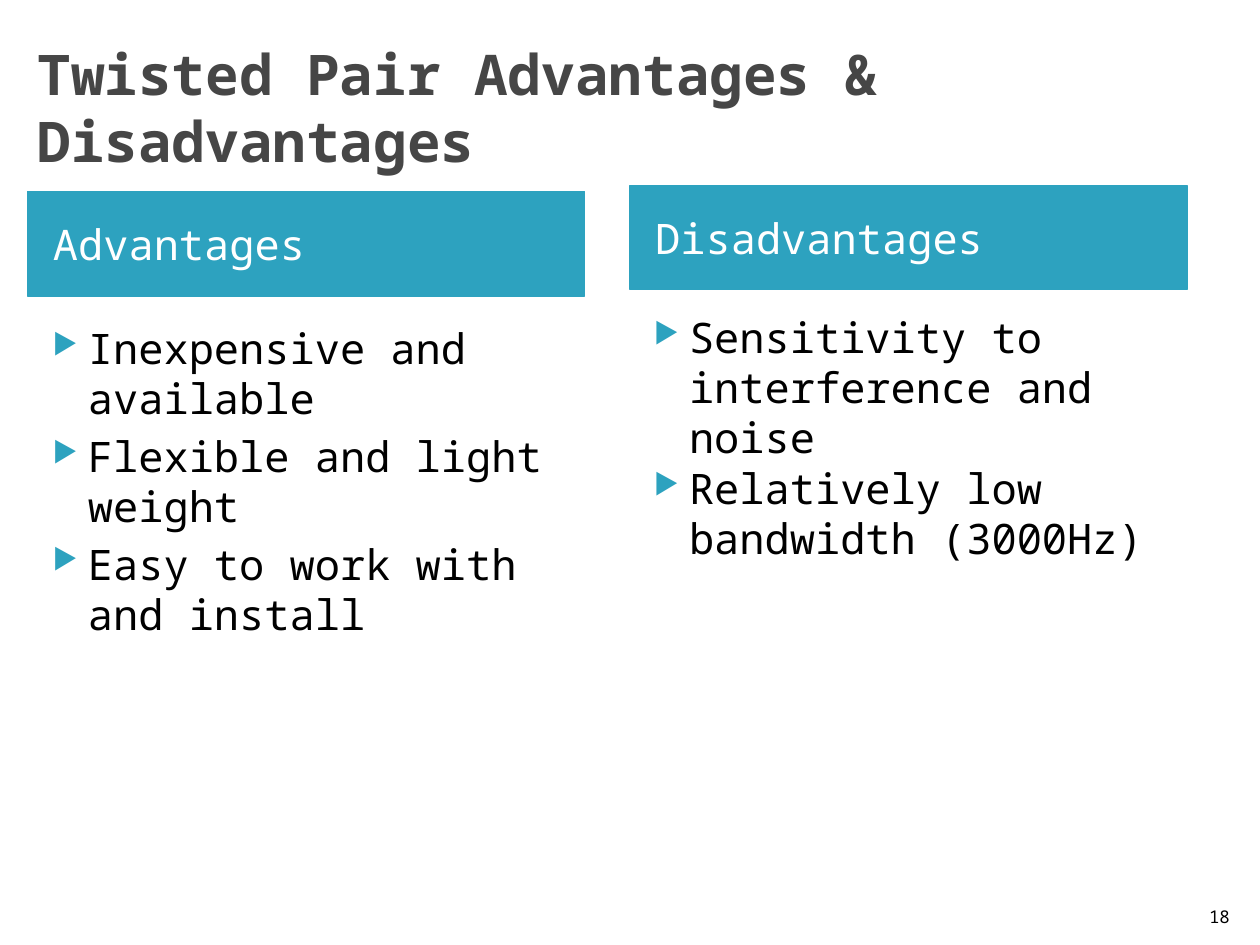
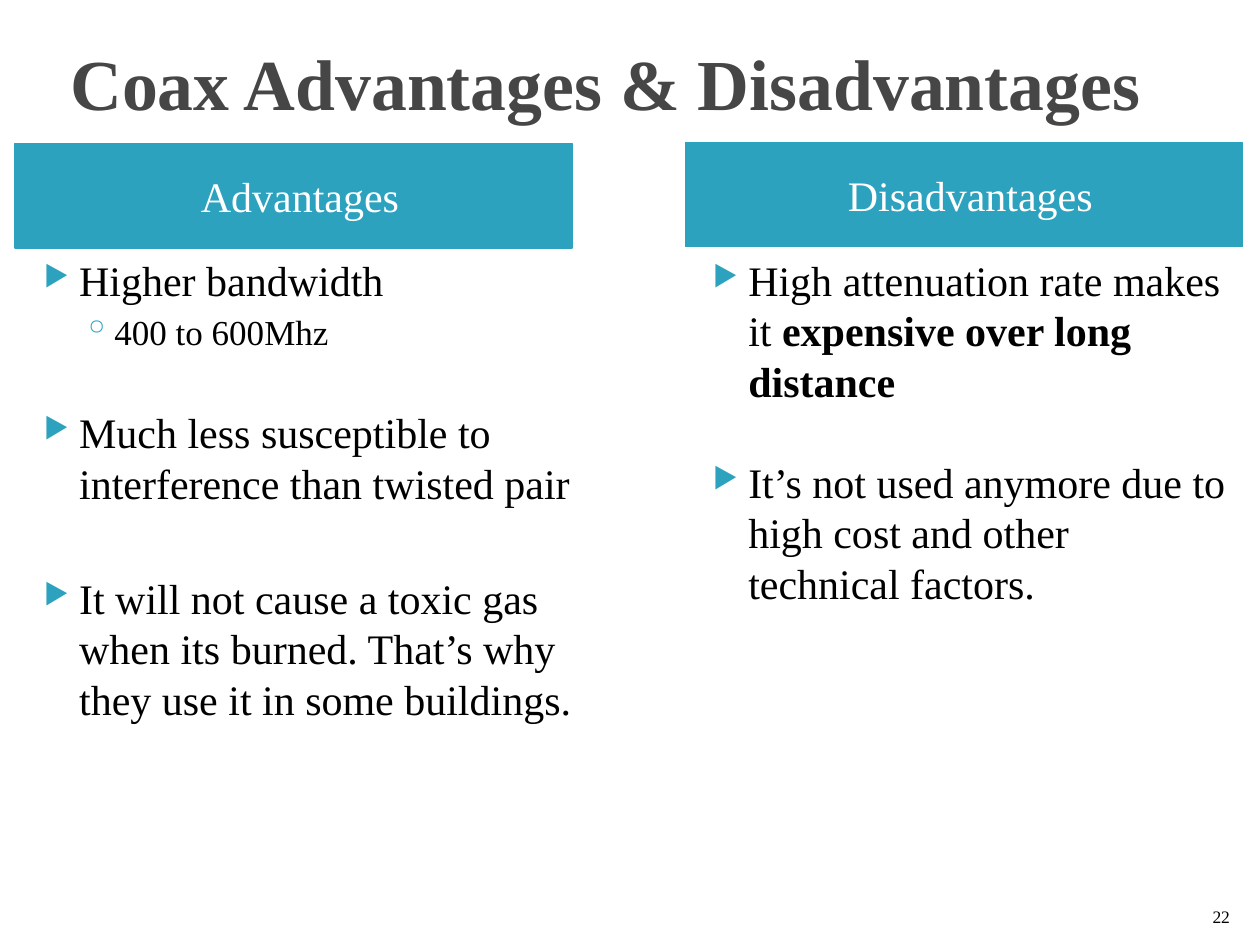
from lxml.etree import SubElement
from pptx import Presentation
from pptx.dml.color import RGBColor
from pptx.enum.shapes import MSO_SHAPE
from pptx.enum.text import MSO_ANCHOR, PP_ALIGN
from pptx.oxml.ns import qn
from pptx.util import Inches, Pt

TEAL, GREY, BLACK, WHITE = "2DA2BF", "464646", "000000", "FFFFFF"
BAND = (4.42, 0.83)
LEADING = 1.2
MARKS = [
    dict(char="▶", size=24, left=0.4, hang=0.28, scale=68),
    dict(char="◦", size=20, left=0.68, hang=0.25, scale=100),
]

SLIDES = [
    dict(
        title="Twisted Pair Advantages & Disadvantages",
        place=(0.2, 0.22, 9.8, 1.25), size=32,
        font="Noto Sans Mono", align=PP_ALIGN.LEFT, number="18",
        sides=[
            dict(head="Advantages", band=(0.22, 1.52), body=(0.2, 2.51, 4.57, 3.68),
                 points=[(0, 0, "Inexpensive and available"),
                         (0, 4, "Flexible and light weight"),
                         (0, 4, "Easy to work with and install")]),
            dict(head="Disadvantages", band=(5, 1.47), body=(4.97, 2.42, 4.42, 3.64),
                 points=[(0, 0, "Sensitivity to interference and noise"),
                         (0, 0, "Relatively low bandwidth (3000Hz)")]),
        ],
    ),
    dict(
        title="Coax Advantages & Disadvantages",
        place=(0.46, 0.02, 9, 1.25), size=41,
        font="Times New Roman", align=PP_ALIGN.CENTER, number="22",
        sides=[
            dict(head="Advantages", band=(0.12, 1.14), body=(0.13, 1.97, 4.6, 4.31),
                 points=[(0, 0, "Higher bandwidth"),
                         (1, 3.2, "400 to 600Mhz"),
                         (0, 31, "Much less susceptible to interference than twisted pair"),
                         (0, 37, "It will not cause a toxic gas when its burned. "
                                 "That’s why they use it in some buildings.")]),
            dict(head="Disadvantages", band=(5.44, 1.13), body=(5.44, 1.97, 4.42, 4.31),
                 points=[(0, 0, "High attenuation rate makes it ",
                          "expensive over long distance"),
                         (0, 29, "It’s not used anymore due to high cost "
                                 "and other technical factors.")]),
        ],
    ),
]


def paint(text):
    return RGBColor.from_string(text)


def write(para, text, strong="", *, font, size, color=BLACK, bold=False,
          align=PP_ALIGN.LEFT, before=0):
    para.alignment = align
    para.space_before = Pt(before)
    para.line_spacing = Pt(size * LEADING)
    for part, heavy in ((text, bold), (strong, True)):
        if part:
            run = para.add_run()
            run.text = part
            run.font.name = font
            run.font.size = Pt(size)
            run.font.bold = heavy
            run.font.color.rgb = paint(color)


def box(slide, place, anchor=MSO_ANCHOR.TOP):
    frame = slide.shapes.add_textbox(*map(Inches, place)).text_frame
    frame.word_wrap = True
    frame.vertical_anchor = anchor
    return frame


def bullet(para, level):
    mark = MARKS[level]
    para.level = level
    props = para._p.get_or_add_pPr()
    props.set("marL", str(Inches(mark["left"])))
    props.set("indent", str(-Inches(mark["hang"])))
    SubElement(SubElement(props, qn("a:buClr")), qn("a:srgbClr"), val=TEAL)
    SubElement(props, qn("a:buSzPct"), val=str(mark["scale"] * 1000))
    SubElement(props, qn("a:buChar"), char=mark["char"])
    return mark["size"]


def band(slide, text, spot, **style):
    shape = slide.shapes.add_shape(MSO_SHAPE.RECTANGLE, *map(Inches, spot + BAND))
    shape.shadow.inherit = False
    shape.fill.solid()
    shape.fill.fore_color.rgb = paint(TEAL)
    shape.line.color.rgb = paint(TEAL)
    shape.line.width = Pt(0.75)
    frame = shape.text_frame
    frame.word_wrap = True
    frame.vertical_anchor = MSO_ANCHOR.MIDDLE
    frame.margin_left = Inches(0.2)
    write(frame.paragraphs[0], text, size=24, color=WHITE, **style)


def points(slide, place, items, font):
    frame = box(slide, place)
    for i, (level, before, *texts) in enumerate(items):
        para = frame.add_paragraph() if i else frame.paragraphs[0]
        size = bullet(para, level)
        write(para, *texts, font=font, size=size, before=before)


def build(deck, data):
    slide = deck.slides.add_slide(deck.slide_layouts[6])
    font = data["font"]
    title = box(slide, data["place"], MSO_ANCHOR.MIDDLE)
    write(title.paragraphs[0], data["title"], font=font, size=data["size"],
          color=GREY, bold=True)
    for side in data["sides"]:
        band(slide, side["head"], side["band"], font=font, align=data["align"])
        points(slide, side["body"], side["points"], font)
    foot = box(slide, (9.46, 7.01, 0.4, 0.4), MSO_ANCHOR.BOTTOM)
    write(foot.paragraphs[0], data["number"], font=font, size=10,
          align=PP_ALIGN.RIGHT)


def main():
    deck = Presentation()
    deck.slide_width, deck.slide_height = Inches(10), Inches(7.5)
    for data in SLIDES:
        build(deck, data)
    deck.save("out.pptx")


if __name__ == "__main__":
    main()
